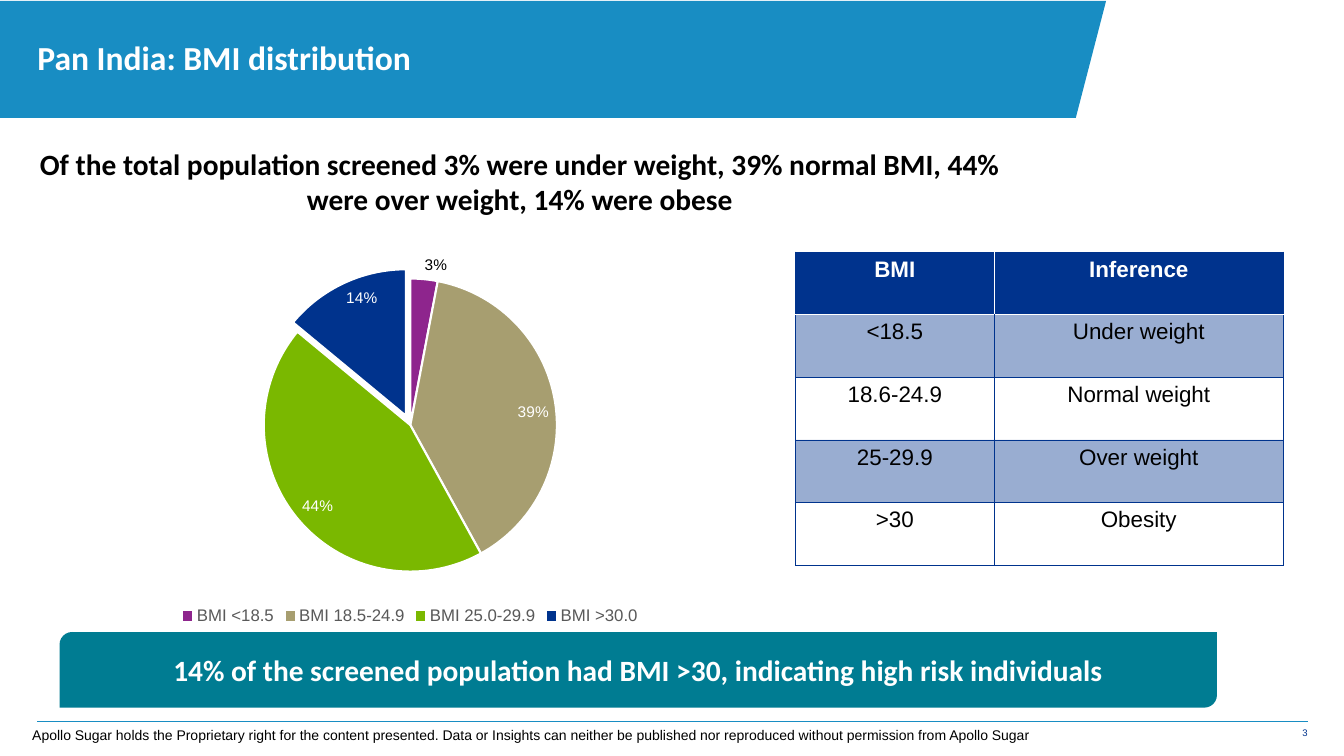
import pptx
import pptx.chart.data
import pptx.dml.color
import pptx.enum.chart
import pptx.enum.shapes
import pptx.enum.text
import pptx.oxml
import pptx.oxml.ns
import pptx.util
from pptx.util import Inches

COLORS = {
    "banner": "188DC3", "teal": "007C92", "navy": "00338D", "purple": "8E258D",
    "tan": "A79E70", "green": "7AB800", "grey": "595959",
    "black": "000000", "white": "FFFFFF",
}
ALIGN = pptx.enum.text.PP_ALIGN
ANCHOR = pptx.enum.text.MSO_ANCHOR
LABEL_POS = pptx.enum.chart.XL_LABEL_POSITION
qn = pptx.oxml.ns.qn

BMI_SHARES = [
    ("BMI <18.5", 0.03, "purple"), ("BMI 18.5-24.9", 0.39, "tan"),
    ("BMI 25.0-29.9", 0.44, "green"), ("BMI >30.0", 0.14, "navy"),
]
BMI_ROWS = [
    ("BMI", "Inference"), ("<18.5", "Under weight"), ("18.6-24.9", "Normal weight"),
    ("25-29.9", "Over weight"), (">30", "Obesity"),
]


def rgb(name):
    return pptx.dml.color.RGBColor.from_string(COLORS[name])


def set_font(font, color, **values):
    for key, value in values.items():
        setattr(font, key, pptx.util.Pt(value) if key == "size" else value)
    font.color.rgb = rgb(color)


def paint(fill, color):
    fill.solid()
    fill.fore_color.rgb = rgb(color)


def write(tf, text, color, align=ALIGN.LEFT, **font):
    p = tf.paragraphs[0]
    p.alignment = align
    r = p.add_run()
    r.text = text
    set_font(r.font, color, **font)


def add_text(s, box, text, color, align=ALIGN.LEFT, anchor=ANCHOR.TOP, wrap=True, **font):
    tf = s.shapes.add_textbox(*map(Inches, box)).text_frame
    frame = {"margin_left": 0, "margin_right": 0, "margin_top": 0, "margin_bottom": 0,
             "word_wrap": wrap, "vertical_anchor": anchor}
    for key, value in frame.items():
        setattr(tf, key, value)
    write(tf, text, color, align, **font)


def add_banner(s):
    builder = s.shapes.build_freeform(Inches(10.97), Inches(0.01))
    corners = [(-0.02, 0.01), (-0.02, 1.17), (10.67, 1.17)]
    builder.add_line_segments([(Inches(x), Inches(y)) for x, y in corners], close=True)
    sp = builder.convert_to_shape()
    sp.shadow.inherit = False
    paint(sp.fill, "banner")
    sp.line.fill.background()


def add_callout(s, box, text):
    kind = pptx.enum.shapes.MSO_SHAPE.ROUND_2_DIAG_RECTANGLE
    sp = s.shapes.add_shape(kind, *map(Inches, box))
    sp.shadow.inherit = False
    paint(sp.fill, "teal")
    sp.line.fill.background()
    sp.text_frame.word_wrap = True
    sp.text_frame.vertical_anchor = ANCHOR.MIDDLE
    write(sp.text_frame, text, "white", ALIGN.CENTER, name="Calibri", size=21, bold=True)


def add_rule(s, left, right, y):
    line = s.shapes.add_connector(
        pptx.enum.shapes.MSO_CONNECTOR.STRAIGHT,
        Inches(left), Inches(y), Inches(right), Inches(y))
    line.line.color.rgb = rgb("banner")
    line.line.width = pptx.util.Pt(0.25)
    pptx.oxml.ns  # namespace helpers
    line._element.spPr.append(pptx.oxml.parse_xml(
        '<a:effectLst xmlns:a="http://schemas.openxmlformats.org/drawingml/2006/main"/>'))


def add_pie(s, box):
    data = pptx.chart.data.CategoryChartData(number_format="0%")
    data.categories = [name for name, _, _ in BMI_SHARES]
    data.add_series("Series 1", [share for _, share, _ in BMI_SHARES])
    chart = s.shapes.add_chart(
        pptx.enum.chart.XL_CHART_TYPE.PIE, *map(Inches, box), data).chart
    set_font(chart.font, "black", name="Arial", size=10)
    chart.has_title = False
    chart.has_legend = True
    chart.legend.position = pptx.enum.chart.XL_LEGEND_POSITION.BOTTOM
    chart.legend.include_in_layout = False
    set_font(chart.legend.font, "grey", name="Arial", size=12)

    # Slices, with the obese group pulled out
    plot = chart.plots[0]
    plot.vary_by_categories = True
    series = plot.series[0]
    for i, (_, _, color) in enumerate(BMI_SHARES):
        fmt = series.points[i].format
        paint(fmt.fill, color)
        fmt.line.color.rgb = rgb("white")
        fmt.line.width = pptx.util.Pt(1.5)
    obese = series._element.findall(qn("c:dPt"))[-1]
    explosion = pptx.oxml.parse_xml(
        '<c:explosion xmlns:c="http://schemas.openxmlformats.org/drawingml/2006/chart" val="7"/>')
    obese.find(qn("c:spPr")).addprevious(explosion)

    # Labels: white inside, black outside for the thin slice
    labels = series.data_labels
    values = {"show_value": True, "show_percentage": False, "number_format": "0%",
              "number_format_is_linked": False, "position": LABEL_POS.INSIDE_END}
    for key, value in values.items():
        setattr(labels, key, value)
    set_font(labels.font, "white", name="Arial", size=11)
    thin = series.points[0].data_label
    set_font(thin.font, "black", name="Arial", size=11)
    thin.position = LABEL_POS.OUTSIDE_END


def set_border(cell, side, color, width):
    pr = cell._tc.get_or_add_tcPr()
    pr.append(pptx.oxml.parse_xml(
        '<a:%s xmlns:a="http://schemas.openxmlformats.org/drawingml/2006/main" w="%d">'
        '<a:solidFill><a:srgbClr val="%s"/></a:solidFill></a:%s>'
        % (side, pptx.util.Pt(width), COLORS[color], side)))


def add_bmi_table(s, box):
    table = s.shapes.add_table(len(BMI_ROWS), 2, *map(Inches, box)).table
    for column, width in zip(table.columns, (1.97, 2.87)):
        column.width = Inches(width)
    for i, row in enumerate(BMI_ROWS):
        for j, text in enumerate(row):
            cell = table.cell(i, j)
            header = i == 0
            # Borders come before the fill in the cell properties
            for side in ("lnL", "lnR", "lnT", "lnB"):
                inner = header and (side, j) in (("lnR", 0), ("lnL", 1))
                divider = (side, i) in (("lnB", 0), ("lnT", 1))
                if divider:
                    set_border(cell, side, "white", 1)
                elif not inner:
                    set_border(cell, side, "navy", 0.5)
            if header or i % 2:
                paint(cell.fill, "navy")
            else:
                cell.fill.background()
            if i % 2:
                clr = cell._tc.tcPr.find(qn("a:solidFill"))[0]
                clr.append(pptx.oxml.parse_xml(
                    '<a:alpha xmlns:a="http://schemas.openxmlformats.org/drawingml/2006/main"'
                    ' val="40000"/>'))
            write(cell.text_frame, text, "white" if header else "black", ALIGN.CENTER,
                  name="Arial", size=16, bold=header)


def main():
    prs = pptx.Presentation()
    prs.slide_width, prs.slide_height = Inches(13.33), Inches(7.5)
    s = prs.slides.add_slide(prs.slide_layouts[6])

    # Header
    add_banner(s)
    add_text(s, (0.37, 0.13, 10.4, 0.87), "Pan India: BMI distribution", "white",
             anchor=ANCHOR.MIDDLE, name="Calibri", size=24, bold=True)

    # Findings
    add_text(s, (0.37, 1.45, 9.57, 0.71),
             "Of the total population screened 3% were under weight, 39% normal BMI, "
             "44% were over weight, 14% were obese",
             "black", ALIGN.CENTER, name="Calibri", size=21, bold=True)
    add_pie(s, (0.72, 2.34, 6.7, 3.9))
    add_bmi_table(s, (7.89, 2.5, 4.84, 3.11))
    add_callout(s, (0.59, 6.27, 11.48, 0.75),
                "14% of the screened population had BMI >30, indicating high risk individuals")

    # Footer
    add_rule(s, 0.37, 12.97, 7.15)
    add_text(s, (0.32, 7.21, 10.1, 0.17),
             "Apollo Sugar holds the Proprietary right for the content presented. Data or "
             "Insights can neither be published nor reproduced without permission from "
             "Apollo Sugar", "black", wrap=False, name="Arial", size=10)
    add_text(s, (12.29, 7.21, 0.68, 0.25), "3", "navy", ALIGN.RIGHT, name="Arial", size=6.8)
    prs.save("out.pptx")


if __name__ == "__main__":
    main()
